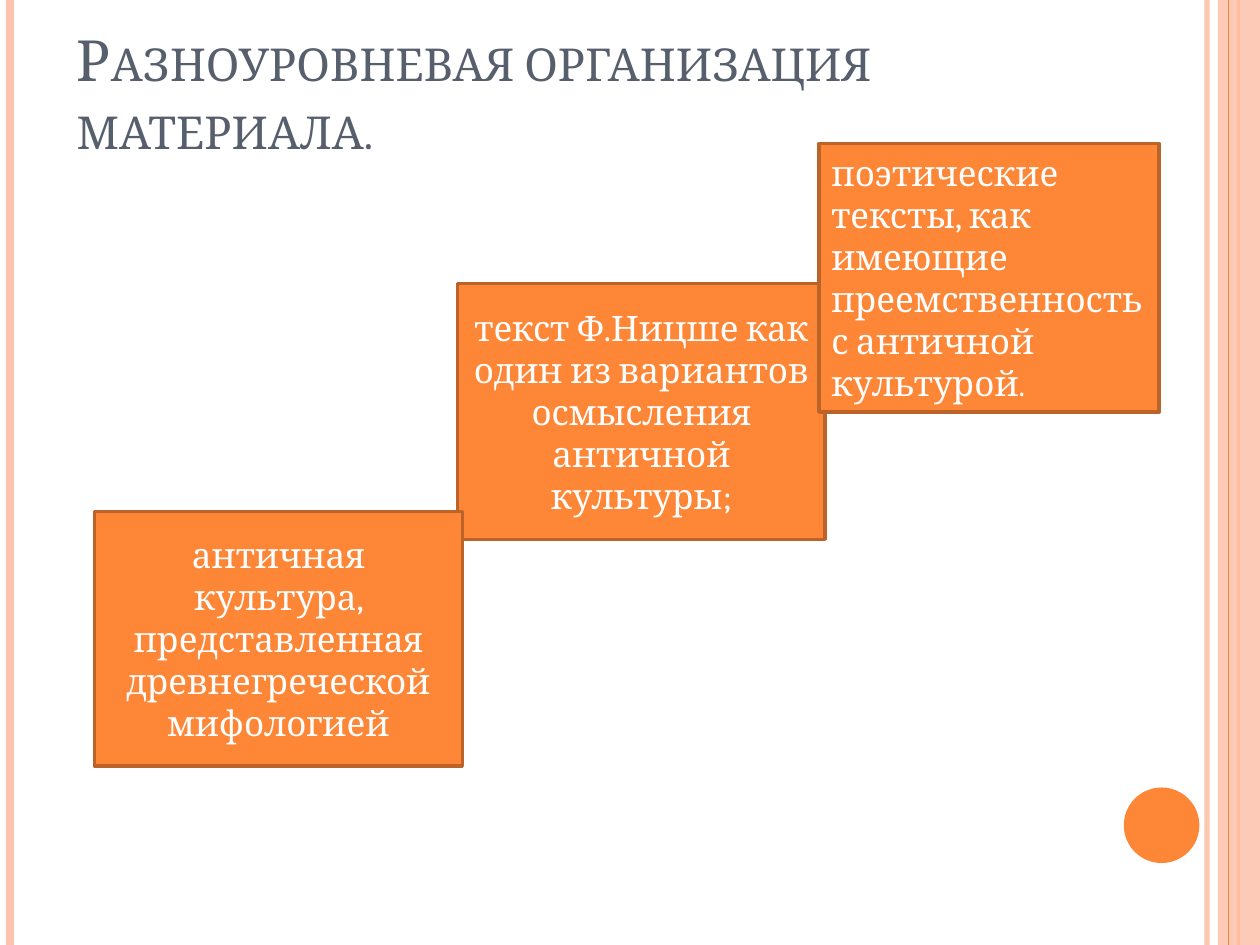
from lxml.etree import SubElement
from pptx import Presentation
from pptx.dml.color import RGBColor
from pptx.enum.shapes import MSO_CONNECTOR, MSO_SHAPE
from pptx.enum.text import MSO_ANCHOR, PP_ALIGN
from pptx.oxml.ns import qn
from pptx.util import Pt

INK = {"orange": "FE8637", "pale": "FEC3AE", "edge": "BC6329",
       "slate": "575F6D", "white": "FFFFFF"}
SIZE = (720, 540)
RULES = [(689.8, "pale", 3, 93), (5.8, "pale", 4.5, 100), (707.8, "orange", 1.5, 100)]
EDGE = (702, "orange", 0.75, 100)
STEPS = [
    ((261.4, 162, 210.2, 146.2), PP_ALIGN.CENTER,
     [("текст Ф.Ницше как один из вариантов осмысления античной культуры;", 20)]),
    ((468, 82.1, 194.4, 153.4), PP_ALIGN.LEFT,
     [("поэтические тексты, как имеющие преемственность с античной культурой", 20),
      (".", 18)]),
    ((54, 292.3, 210.2, 145.4), PP_ALIGN.CENTER,
     [("античная культура, представленная древнегреческой мифологией", 20)]),
]


def shade(name):
    """Return the named colour."""
    return RGBColor.from_string(INK[name])


def apply(item, **form):
    """Set each format value on the item."""
    for key, value in form.items():
        setattr(item, key, value)


def fade(shape, alpha):
    """Make the shape's one colour partly transparent."""
    if alpha < 100:
        tint = next(shape.element.spPr.iter(qn("a:srgbClr")))
        SubElement(tint, qn("a:alpha"), val=str(alpha * 1000))


def block(slide, kind, box, fill):
    """Draw a plain filled shape."""
    shape = slide.shapes.add_shape(kind, *map(Pt, box))
    shape.shadow.inherit = False
    shape.fill.solid()
    shape.fill.fore_color.rgb = shade(fill)
    shape.line.fill.background()
    return shape


def rule(slide, x, tone, width, alpha):
    """Draw a vertical rule over the full height."""
    line = slide.shapes.add_connector(
        MSO_CONNECTOR.STRAIGHT, Pt(x), Pt(0), Pt(x), Pt(SIZE[1]))
    line.line.color.rgb = shade(tone)
    line.line.width = Pt(width)
    fade(line, alpha)
    SubElement(line.element.spPr, qn("a:effectLst"))


def write(para, text, size, tone):
    """Add a run of text to the paragraph."""
    run = para.add_run()
    run.text = text
    apply(run.font, name="Cambria", size=Pt(size))
    run.font.color.rgb = shade(tone)
    return run


def frame(slide):
    """Draw the side rules, the right band and the dot."""
    for spec_row in RULES:
        rule(slide, *spec_row)
    fade(block(slide, MSO_SHAPE.RECTANGLE, (696, 0, 24, SIZE[1]), "pale"), 87)
    rule(slide, *EDGE)
    block(slide, MSO_SHAPE.OVAL, (642.2, 450, 43.2, 43.2), "orange")


def title(slide, box, text):
    """Write the heading in small capitals."""
    body = slide.shapes.add_textbox(*map(Pt, box)).text_frame
    apply(body, word_wrap=True, vertical_anchor=MSO_ANCHOR.BOTTOM,
          margin_bottom=Pt(35))
    run = write(body.paragraphs[0], text, 32.4, "slate")
    run.font._element.set("cap", "small")


def step(slide, box, align, parts):
    """Draw one step of the staircase with its text."""
    shape = block(slide, MSO_SHAPE.RECTANGLE, box, "orange")
    shape.line.color.rgb = shade("edge")
    shape.line.width = Pt(2)
    body = shape.text_frame
    apply(body, word_wrap=True, vertical_anchor=MSO_ANCHOR.MIDDLE)
    para = body.paragraphs[0]
    para.alignment = align
    for text, size in parts:
        write(para, text, size, "white")


def main():
    """Build the slide and save it."""
    deck = Presentation()
    apply(deck, slide_width=Pt(SIZE[0]), slide_height=Pt(SIZE[1]))
    slide = deck.slides.add_slide(deck.slide_layouts[6])
    frame(slide)
    title(slide, (36.7, 15.1, 588.2, 111.6), "Разноуровневая организация материала.")
    for box, align, parts in STEPS:
        step(slide, box, align, parts)
    deck.save("out.pptx")


if __name__ == "__main__":
    main()
